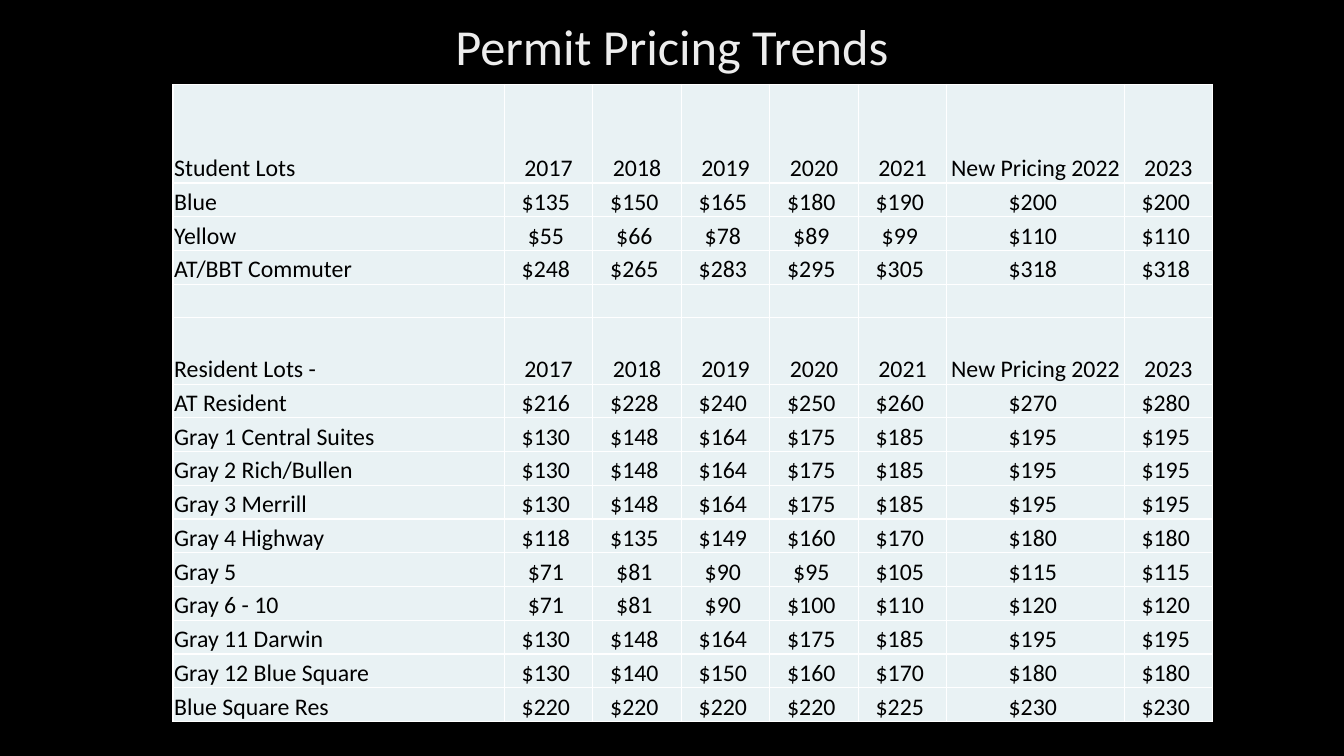
from lxml.etree import SubElement
from pptx import Presentation
from pptx.dml.color import RGBColor
from pptx.enum.text import MSO_ANCHOR, PP_ALIGN
from pptx.oxml import parse_xml
from pptx.oxml.ns import nsdecls, qn
from pptx.util import Cm, Pt

COLORS = {
    "background": "000000",
    "cell": "E9F2F4",
    "border": "FFFFFF",
    "text": "000000",
}
TITLE_GRADIENT = [(0, "BFBFBF"), (28, "EDEDED"), (100, "FFFFFF")]
FONT = "Calibri"

YEARS = ["2017", "2018", "2019", "2020", "2021", "New Pricing 2022", "2023"]
GRAY_STANDARD = [130, 148, 164, 175, 185, 195, 195]
STUDENT_LOTS = [
    ("Blue", [135, 150, 165, 180, 190, 200, 200]),
    ("Yellow", [55, 66, 78, 89, 99, 110, 110]),
    ("AT/BBT Commuter", [248, 265, 283, 295, 305, 318, 318]),
]
RESIDENT_LOTS = [
    ("AT Resident", [216, 228, 240, 250, 260, 270, 280]),
    ("Gray 1 Central Suites", GRAY_STANDARD),
    ("Gray 2 Rich/Bullen", GRAY_STANDARD),
    ("Gray 3 Merrill", GRAY_STANDARD),
    ("Gray 4 Highway", [118, 135, 149, 160, 170, 180, 180]),
    ("Gray 5", [71, 81, 90, 95, 105, 115, 115]),
    ("Gray 6 - 10", [71, 81, 90, 100, 110, 120, 120]),
    ("Gray 11 Darwin", GRAY_STANDARD),
    ("Gray 12 Blue Square", [130, 140, 150, 160, 170, 180, 180]),
    ("Blue Square Res", [220, 220, 220, 220, 225, 230, 230]),
]
COLUMN_WIDTHS = [8.35] + [2.23] * 5 + [4.47, 2.23]
ROW_HEIGHT = 0.85
HEADING_HEIGHTS = {"Student Lots": 2.48, "Resident Lots -": 1.67}


def price_rows(heading, lots):
    """Return a heading row of years followed by one row of prices per lot."""
    return [[heading] + YEARS] + [
        [lot] + [f"${price} " for price in prices] for lot, prices in lots
    ]


def add_run(paragraph, text, size):
    run = paragraph.add_run()
    run.text = text
    run.font.name = FONT
    run.font.size = Pt(size)
    return run


def apply_gradient(run, stops, angle):
    """Fill the run's letters with a linear gradient."""
    stop_xml = "".join(
        f'<a:gs pos="{percent * 1000}"><a:srgbClr val="{color}"/></a:gs>'
        for percent, color in stops
    )
    run.font._element.insert(0, parse_xml(
        f'<a:gradFill {nsdecls("a")}><a:gsLst>{stop_xml}</a:gsLst>'
        f'<a:lin ang="{angle * 60000}" scaled="0"/></a:gradFill>'
    ))


def add_title(slide, text):
    title = slide.shapes.title
    title.left, title.top = Cm(2.33), Cm(0.38)
    title.width, title.height = Cm(29.21), Cm(1.73)
    title.text_frame.vertical_anchor = MSO_ANCHOR.MIDDLE
    paragraph = title.text_frame.paragraphs[0]
    paragraph.alignment = PP_ALIGN.CENTER
    paragraph.line_spacing = 0.9
    apply_gradient(add_run(paragraph, text, 36), TITLE_GRADIENT, 80)


def add_borders(cell):
    properties = cell._tc.get_or_add_tcPr()
    for index, side in enumerate(["lnL", "lnR", "lnT", "lnB"]):
        line = SubElement(properties, qn(f"a:{side}"), w=str(Pt(1)))
        fill = SubElement(line, qn("a:solidFill"))
        SubElement(fill, qn("a:srgbClr"), val=COLORS["border"])
        properties.insert(index, line)


def format_cell(cell, text, alignment):
    cell.fill.solid()
    cell.fill.fore_color.rgb = RGBColor.from_string(COLORS["cell"])
    add_borders(cell)
    cell.vertical_anchor = MSO_ANCHOR.BOTTOM
    cell.margin_left = cell.margin_right = cell.margin_top = Cm(0.03)
    cell.margin_bottom = 0
    if text:
        paragraph = cell.text_frame.paragraphs[0]
        paragraph.alignment = alignment
        run = add_run(paragraph, text, 17)
        run.font.color.rgb = RGBColor.from_string(COLORS["text"])


def add_price_table(slide, rows):
    heights = [HEADING_HEIGHTS.get(row[0], ROW_HEIGHT) for row in rows]
    table = slide.shapes.add_table(
        len(rows), len(COLUMN_WIDTHS), Cm(4.36), Cm(2.13),
        Cm(sum(COLUMN_WIDTHS)), Cm(sum(heights)),
    ).table
    table.first_row = table.horz_banding = False
    for column, width in zip(table.columns, COLUMN_WIDTHS):
        column.width = Cm(width)
    for table_row, height, texts in zip(table.rows, heights, rows):
        table_row.height = Cm(height)
        for index, (cell, text) in enumerate(zip(table_row.cells, texts)):
            format_cell(cell, text, PP_ALIGN.CENTER if index else PP_ALIGN.LEFT)


def main():
    presentation = Presentation()
    presentation.slide_width, presentation.slide_height = Cm(33.87), Cm(19.05)
    slide = presentation.slides.add_slide(presentation.slide_layouts[5])
    slide.background.fill.solid()
    slide.background.fill.fore_color.rgb = RGBColor.from_string(COLORS["background"])
    add_title(slide, "Permit Pricing Trends")
    separator = [""] * len(COLUMN_WIDTHS)
    add_price_table(
        slide,
        price_rows("Student Lots", STUDENT_LOTS)
        + [separator]
        + price_rows("Resident Lots -", RESIDENT_LOTS),
    )
    presentation.save("out.pptx")


if __name__ == "__main__":
    main()
